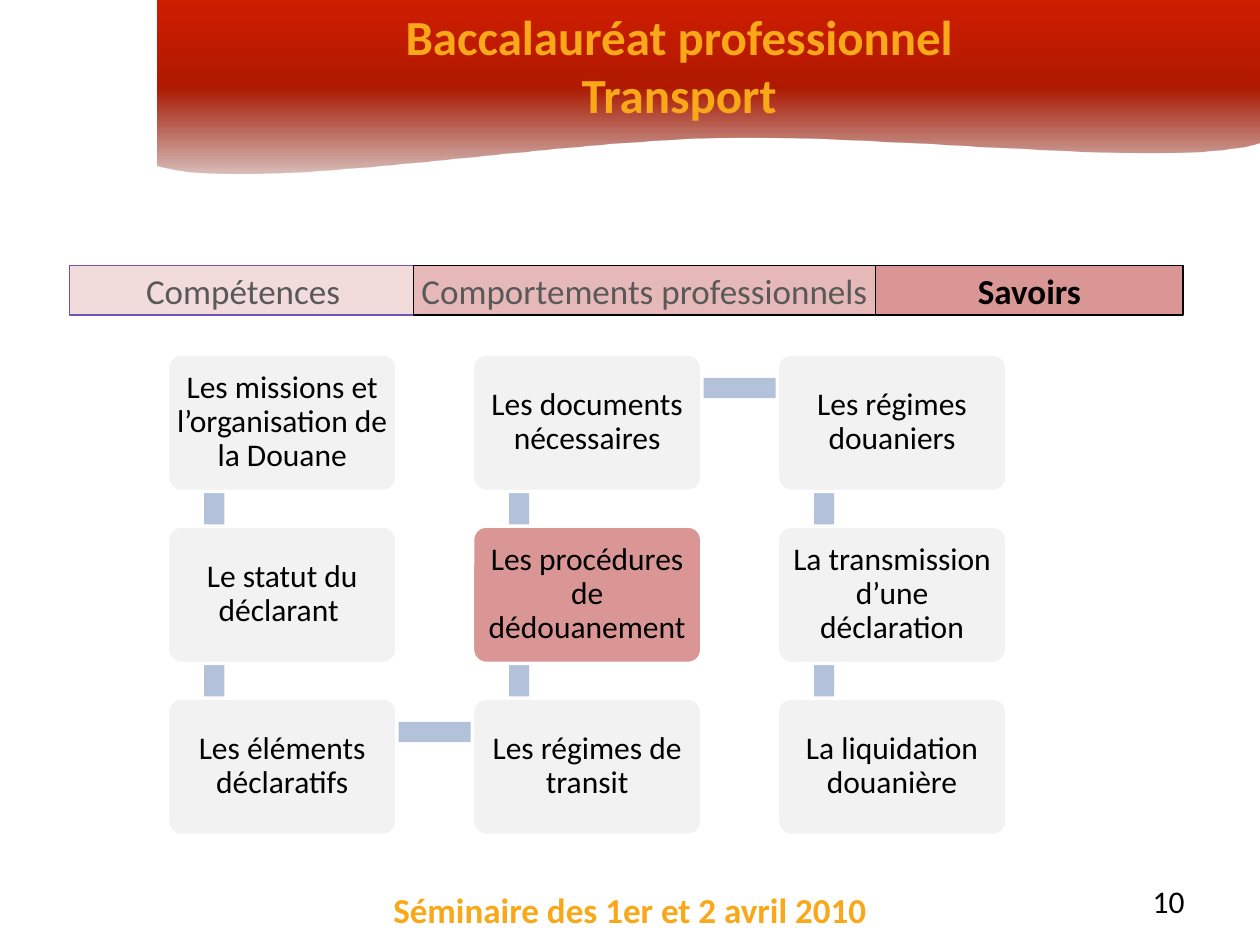
"""Builds the slide on customs topics in the transport diploma."""
from dataclasses import dataclass

from pptx import Presentation
from pptx.dml.color import RGBColor
from pptx.enum.shapes import MSO_SHAPE
from pptx.enum.text import MSO_ANCHOR, PP_ALIGN
from pptx.oxml import parse_xml
from pptx.oxml.ns import nsdecls
from pptx.util import Inches, Pt

RECT, ROUND = MSO_SHAPE.RECTANGLE, MSO_SHAPE.ROUNDED_RECTANGLE
STEP = MSO_SHAPE.FLOWCHART_PROCESS
TOP, MIDDLE = MSO_ANCHOR.TOP, MSO_ANCHOR.MIDDLE
CENTER, RIGHT = PP_ALIGN.CENTER, PP_ALIGN.RIGHT


@dataclass(frozen=True)
class Theme:
    font: str = "Calibri"
    gold: str = "F8A818"
    black: str = "000000"
    gray: str = "595959"
    white: str = "FFFFFF"
    card: str = "F2F2F2"
    rose: str = "D99694"
    blush: str = "E6B9B8"
    pale: str = "F2DCDB"
    violet: str = "7154B8"
    bar: str = "B3C1DB"
    fade: tuple = ((0, "7B1100", 27), (50, "AF1900", 100), (100, "D01D00", 100))
    title: int = 28
    label: int = 20
    body: int = 18


theme = Theme()
COLS, ROWS = 100, 75
UNIT = Inches(0.1)

deck = Presentation()
deck.slide_width, deck.slide_height = COLS * UNIT, ROWS * UNIT
slide = deck.slides.add_slide(deck.slide_layouts[6])
shapes = slide.shapes


def write(shape, text, size=theme.body, color=theme.black, bold=False,
          align=CENTER, anchor=TOP, wrap=True, inset=None, spacing=None):
    frame = shape.text_frame
    frame.word_wrap = wrap
    frame.vertical_anchor = anchor
    if inset is not None:
        frame.margin_left = frame.margin_right = int(inset * UNIT)
        frame.margin_top = frame.margin_bottom = int(inset * UNIT)
    frame.text = text
    for para in frame.paragraphs:
        para.alignment = align
        if spacing:
            para.line_spacing = spacing
        font = para.runs[0].font
        font.name, font.size, font.bold = theme.font, Pt(size), bold
        font.color.rgb = RGBColor.from_string(color)


def draw(kind, box, fill=None, line=None, width=0.75):
    place = [int(part * UNIT) for part in box]
    if kind is None:
        return shapes.add_textbox(*place)
    shape = shapes.add_shape(kind, *place)
    shape.shadow.inherit = False
    shape.fill.solid()
    shape.fill.fore_color.rgb = RGBColor.from_string(fill)
    if line:
        shape.line.color.rgb = RGBColor.from_string(line)
        shape.line.width = Pt(width)
    else:
        shape.line.fill.background()
    return shape


write(draw(None, (25, 70, 50, 4.4)), "Séminaire des 1er et 2 avril 2010",
      size=theme.label, color=theme.gold, bold=True)

curves = [
    ((100, 11.3), (92.9, 13.4), (71.6, 10.6), (57, 10.9)),
    ((57, 10.9), (42.4, 11.2), (19.9, 15.3), (12.5, 13.1)),
]
wave = [(COLS, 0), curves[0][0]]
for curve in curves:
    for part in range(1, 25):
        t = part / 24
        share = ((1 - t) ** 3, 3 * t * (1 - t) ** 2, 3 * t * t * (1 - t), t ** 3)
        wave.append(tuple(sum(s * p[axis] for s, p in zip(share, curve))
                          for axis in (0, 1)))
path = shapes.build_freeform(int(12.5 * UNIT), 0)
path.add_line_segments([(int(x * UNIT), int(y * UNIT)) for x, y in wave])
band = path.convert_to_shape()
band.shadow.inherit = False
band.line.fill.background()
band.fill.solid()
stops = "".join(
    f'<a:gs pos="{spot * 1000}"><a:srgbClr val="{tint}">'
    f'<a:alpha val="{alpha * 1000}"/></a:srgbClr></a:gs>'
    for spot, tint, alpha in theme.fade)
props = band.element.spPr
props.replace(props.find("{*}solidFill"), parse_xml(
    f'<a:gradFill {nsdecls("a")} rotWithShape="1"><a:gsLst>{stops}</a:gsLst>'
    '<a:lin ang="16200000" scaled="0"/></a:gradFill>'))

write(draw(None, (28.9, 0, 50, 10.4)), "Baccalauréat professionnel\nTransport",
      size=theme.title, color=theme.gold, bold=True)

LEFT, HEAD = 13.3, 28.1
ACROSS, DOWN = 24.2, 13.65
WIDE, TALL, THICK = 18.2, 10.9, 1.6
topics = [
    (0, 0, "Les missions et l’organisation de la Douane"),
    (0, 1, "Le statut du déclarant "),
    (0, 2, "Les éléments déclaratifs"),
    (1, 2, "Les régimes de transit"),
    (1, 1, "Les procédures de dédouanement"),
    (1, 0, "Les documents nécessaires"),
    (2, 0, "Les régimes douaniers"),
    (2, 1, "La transmission d’une déclaration"),
    (2, 2, "La liquidation douanière"),
]
for (col, row, text), after in zip(topics, topics[1:] + [None]):
    if after:
        right, drop = after[0] - col, after[1] - row
        size = (ACROSS if right else DOWN) - 0.1
        mid = LEFT + (col + right / 2) * ACROSS + 3.7
        level = HEAD + (row + drop / 2) * DOWN + 2.7
        bar = draw(RECT, (mid - size / 2, level - THICK / 2, size, THICK), theme.bar)
        bar.rotation = 90 * drop % 360
    fill = theme.rose if (col, row) == (1, 1) else theme.card
    card = draw(ROUND, (LEFT + col * ACROSS, HEAD + row * DOWN, WIDE, TALL),
                fill, theme.white, 2)
    card.adjustments[0] = 0.1
    write(card, text, anchor=MIDDLE, inset=0.4, spacing=0.9)

tabs = [
    (69.5, 24.4, "Savoirs", theme.rose, theme.black, theme.black, True),
    (5.5, 27.6, "Compétences", theme.pale, theme.violet, theme.gray, False),
    (32.8, 36.7, "Comportements professionnels", theme.blush, theme.black,
     theme.gray, False),
]
for left, width, text, fill, line, color, bold in tabs:
    write(draw(STEP, (left, 21.1, width, 3.9), fill, line), text,
          size=theme.label, color=color, bold=bold, anchor=MIDDLE, wrap=False)

write(draw(None, (71.7, 69.5, 23.3, 4)), "10", align=RIGHT)

deck.save("out.pptx")
